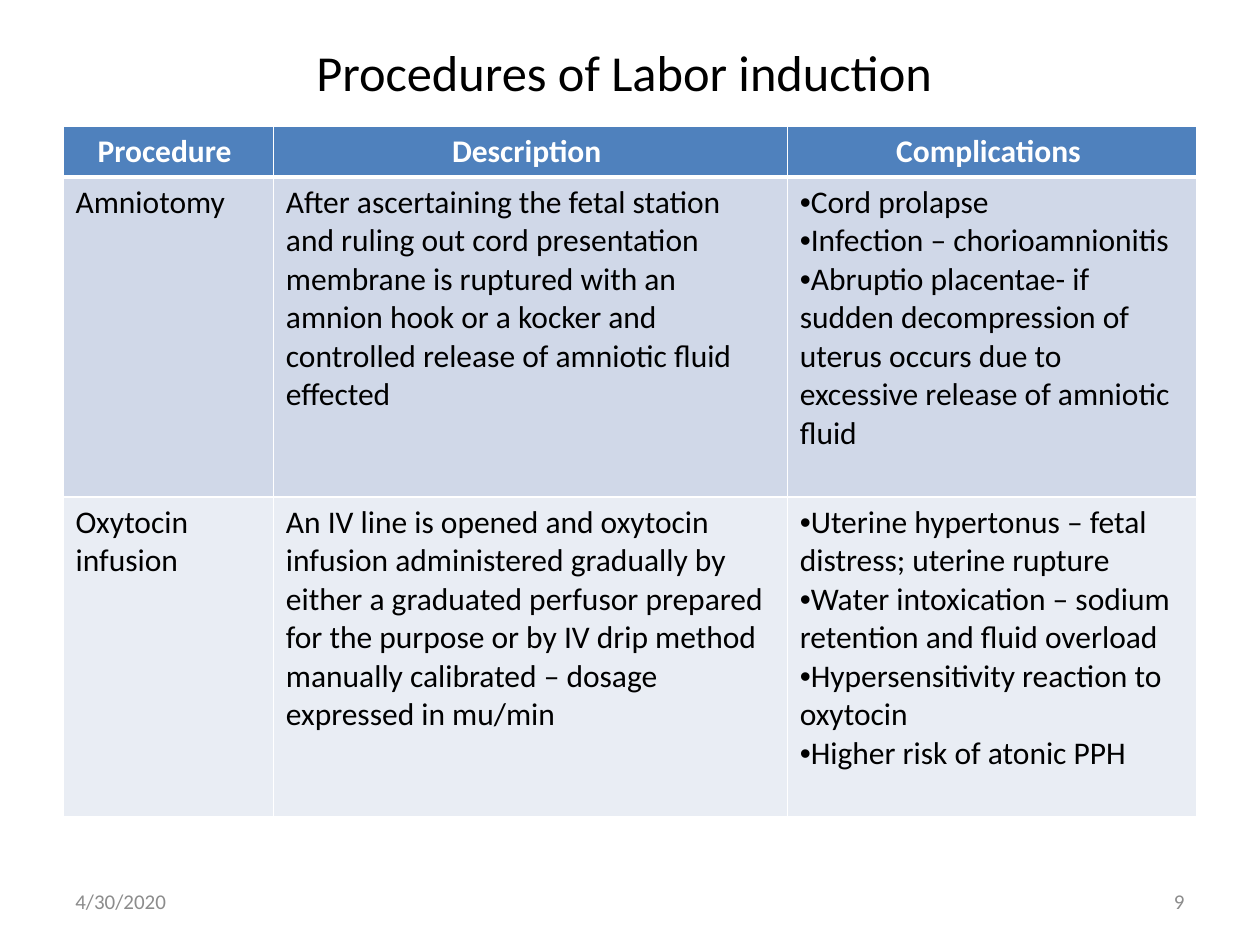
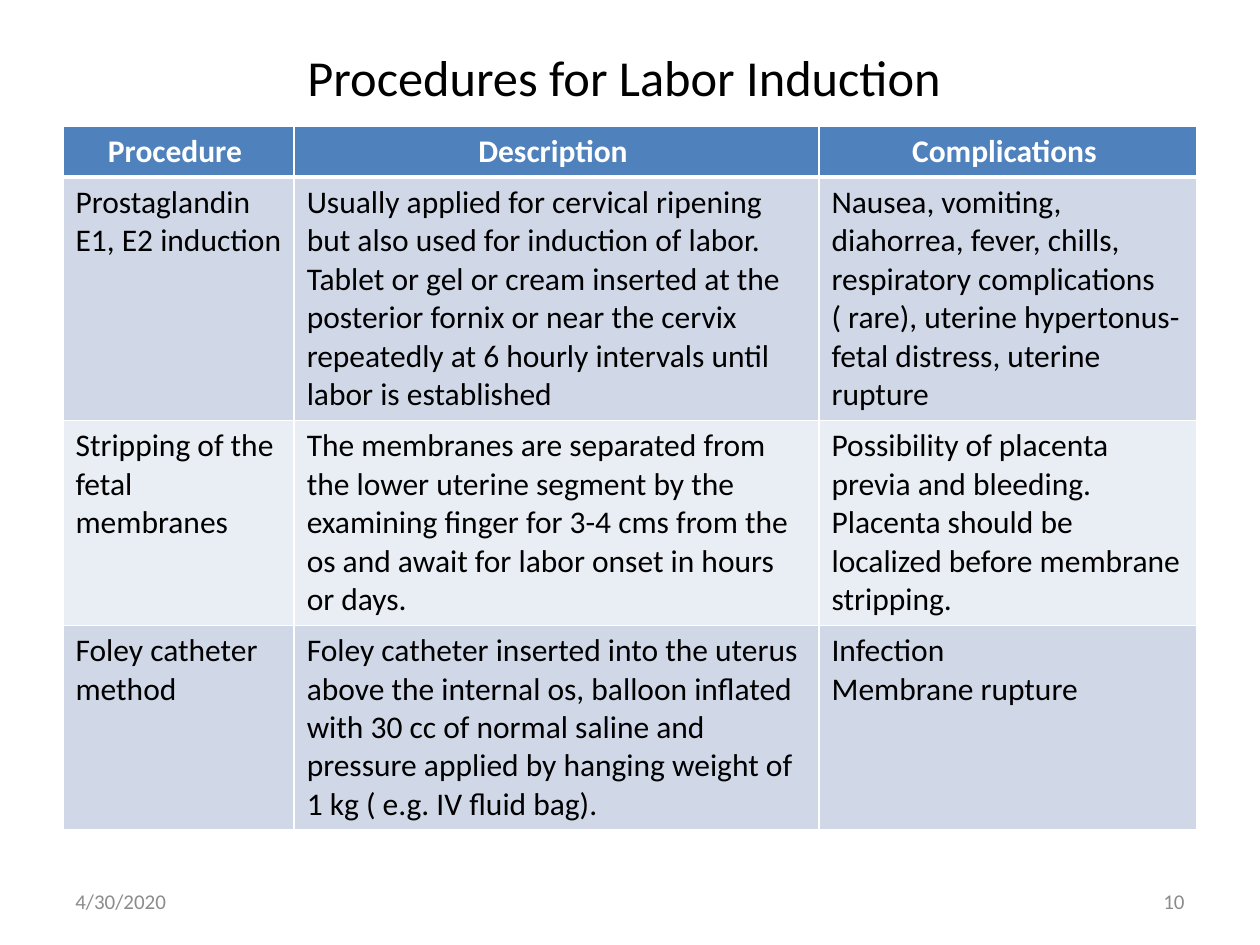
from lxml import etree
from pptx import Presentation
from pptx.dml.color import RGBColor
from pptx.enum.text import MSO_ANCHOR, MSO_AUTO_SIZE, PP_ALIGN
from pptx.oxml.ns import qn
from pptx.util import Cm, Pt

LEFT, CENTER, RIGHT = PP_ALIGN.LEFT, PP_ALIGN.CENTER, PP_ALIGN.RIGHT
TOP, MIDDLE = MSO_ANCHOR.TOP, MSO_ANCHOR.MIDDLE
NO_AUTOFIT = MSO_AUTO_SIZE.NONE

COLORS = {
    "text": "000000",
    "white": "FFFFFF",
    "header": "4F81BD",
    "odd_row": "D0D8E8",
    "even_row": "E9EDF4",
    "footer": "8C8C8C",
}
FONT = "Calibri"
MARGIN = 1.27
CONTENT_WIDTH = 22.86
TABLE_TOP = 2.54
HEADER_HEIGHT = 1.03
FOOTER_TOP, FOOTER_WIDTH, FOOTER_HEIGHT = 17.65, 5.92, 1.02
DATE = "4/30/2020"
HEADINGS = ["Procedure ", "Description ", "Complications "]
BULLET = "•"

PAGES = [
    {
        "title": "Procedures of Labor induction ",
        "title_height": 1.35,
        "number": 9,
        "widths": [4.24, 10.36, 8.26],
        "heights": [6.45, 6.45],
        "rows": [
            ["Amniotomy",
             "After ascertaining the fetal station and ruling out cord presentation membrane is "
             "ruptured with an amnion hook or a kocker and controlled release of amniotic fluid effected",
             ["•Cord prolapse",
              "•Infection – chorioamnionitis",
              "•Abruptio placentae- if sudden decompression of uterus occurs due to excessive "
              "release of amniotic fluid"]],
            ["Oxytocin infusion",
             "An IV line is opened and oxytocin infusion administered gradually by either a graduated "
             "perfusor prepared for the purpose or by IV drip method manually calibrated – dosage "
             "expressed in mu/min",
             ["•Uterine hypertonus – fetal distress; uterine rupture",
              "•Water intoxication – sodium retention and fluid overload",
              "•Hypersensitivity reaction to oxytocin",
              "•Higher risk of atonic PPH"]],
        ],
    },
    {
        "title": "Procedures for Labor Induction ",
        "title_height": 1.57,
        "number": 10,
        "widths": [4.66, 10.58, 7.62],
        "heights": [4.9, 4.13, 4.13],
        "rows": [
            ["Prostaglandin E1, E2 induction",
             "Usually applied for cervical ripening but also used for induction of labor. Tablet or gel "
             "or cream inserted at the posterior fornix or near the cervix repeatedly at 6 hourly "
             "intervals until labor is established",
             "Nausea, vomiting, diahorrea, fever, chills, respiratory complications ( rare), uterine "
             "hypertonus- fetal distress, uterine rupture"],
            ["Stripping of the fetal membranes",
             "The membranes are separated from the lower uterine segment by the examining finger for "
             "3-4 cms from the os and await for labor onset in hours or days.",
             "Possibility of placenta previa and bleeding. Placenta should be localized before "
             "membrane stripping."],
            ["Foley catheter method",
             "Foley catheter inserted into the uterus above the internal os, balloon inflated with "
             "30 cc of normal saline and pressure applied by hanging weight of 1 kg ( e.g. IV fluid bag).",
             ["Infection", "Membrane rupture"]],
        ],
    },
]


class SlideBuilder:
    def __init__(self, deck):
        self.deck = deck
        self.page = None

    def add_page(self):
        self.page = self.deck.slides.add_slide(self.deck.slide_layouts[5])

    def set_lines(self, frame, lines, size, color, align=LEFT, bold=False):
        for index, line in enumerate(lines):
            para = frame.paragraphs[0] if index == 0 else frame.add_paragraph()
            para.text = line.removeprefix(BULLET)
            para.alignment = align
            if line.startswith(BULLET):
                self.add_bullet(para)
            for span in para.runs:
                span.font.name = FONT
                span.font.size = Pt(size)
                span.font.bold = bold
                span.font.color.rgb = RGBColor.from_string(COLORS[color])

    def add_bullet(self, para):
        properties = para._p.get_or_add_pPr()
        properties.set("marL", "0")
        properties.set("indent", "0")
        etree.SubElement(properties, qn("a:buFont"), typeface="Arial")
        etree.SubElement(properties, qn("a:buChar"), char=BULLET)

    def add_title(self, text, height):
        box = self.page.shapes.title
        box.left, box.top = Cm(MARGIN), Cm(0.76)
        box.width, box.height = Cm(CONTENT_WIDTH), Cm(height)
        frame = box.text_frame
        frame.auto_size = NO_AUTOFIT
        frame.vertical_anchor = MIDDLE
        self.set_lines(frame, [text], 28.8, "text", CENTER)

    def add_footer(self, text, left, align):
        box = self.page.shapes.add_textbox(
            Cm(left), Cm(FOOTER_TOP), Cm(FOOTER_WIDTH), Cm(FOOTER_HEIGHT))
        frame = box.text_frame
        frame.word_wrap = True
        frame.vertical_anchor = MIDDLE
        self.set_lines(frame, [text], 12, "footer", align)

    def add_borders(self, cell, row):
        widths = {"L": 1, "R": 1, "T": 3 if row == 1 else 1, "B": 3 if row == 0 else 1}
        properties = cell._tc.get_or_add_tcPr()
        for index, (side, width) in enumerate(widths.items()):
            line = etree.Element(qn(f"a:ln{side}"), w=str(Pt(width)))
            fill = etree.SubElement(line, qn("a:solidFill"))
            etree.SubElement(fill, qn("a:srgbClr"), val=COLORS["white"])
            properties.insert(index, line)

    def add_table(self, rows, widths, heights):
        table = self.page.shapes.add_table(
            len(rows), len(widths), Cm(MARGIN), Cm(TABLE_TOP),
            Cm(CONTENT_WIDTH), Cm(sum(heights))).table
        table.first_row = table.horz_banding = False
        for column, width in zip(table.columns, widths):
            column.width = Cm(width)
        for row_index, (row, height) in enumerate(zip(rows, heights)):
            table.rows[row_index].height = Cm(height)
            header = row_index == 0
            fill = "header" if header else "odd_row" if row_index % 2 else "even_row"
            for column_index, content in enumerate(row):
                cell = table.cell(row_index, column_index)
                cell.vertical_anchor = TOP
                cell.fill.solid()
                cell.fill.fore_color.rgb = RGBColor.from_string(COLORS[fill])
                self.add_borders(cell, row_index)
                lines = [content] if isinstance(content, str) else content
                self.set_lines(cell.text_frame, lines, 18, "white" if header else "text",
                               CENTER if header else LEFT, header)


def main():
    deck = Presentation()
    deck.slide_width, deck.slide_height = Cm(25.4), Cm(19.05)
    builder = SlideBuilder(deck)
    for content in PAGES:
        builder.add_page()
        builder.add_title(content["title"], content["title_height"])
        builder.add_table([HEADINGS] + content["rows"], content["widths"],
                          [HEADER_HEIGHT] + content["heights"])
        builder.add_footer(DATE, MARGIN, LEFT)
        builder.add_footer(str(content["number"]), MARGIN + CONTENT_WIDTH - FOOTER_WIDTH, RIGHT)
    deck.save("out.pptx")


if __name__ == "__main__":
    main()
